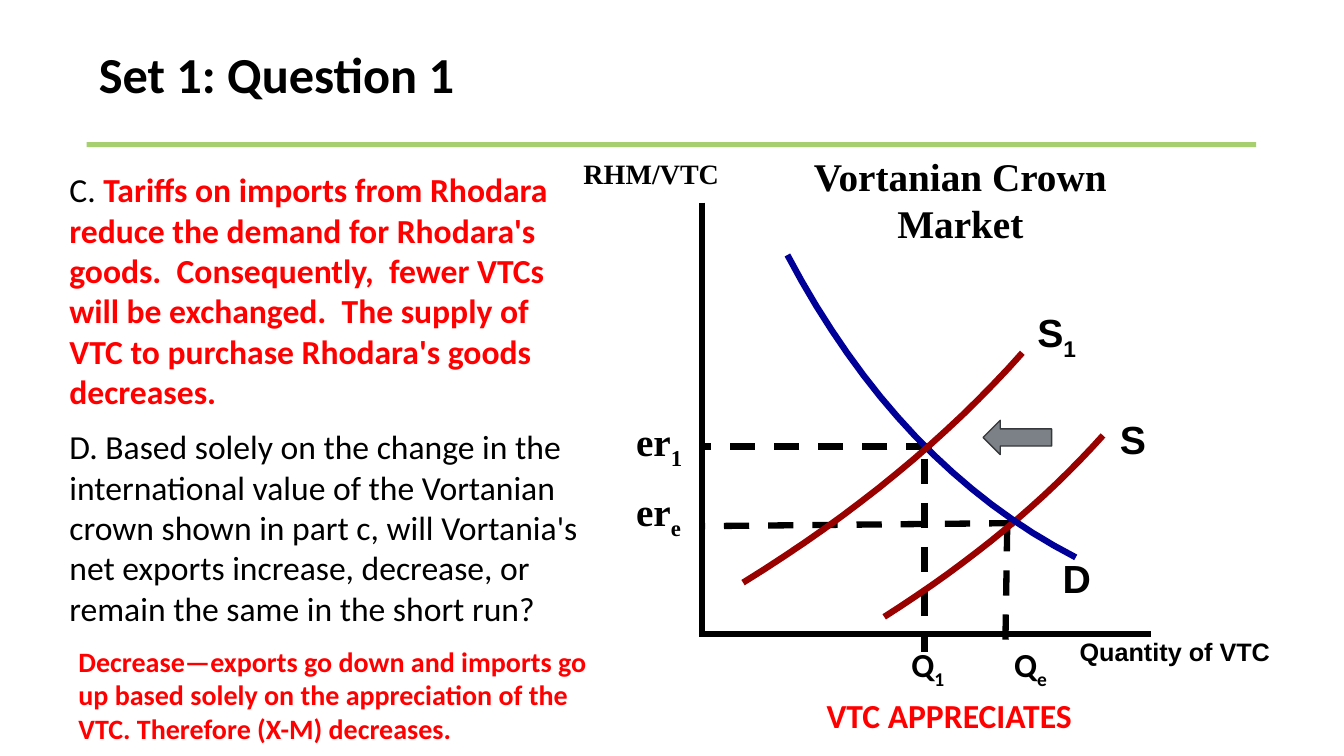
from pptx import Presentation
from pptx import util as u
from pptx.dml.color import RGBColor
from pptx.enum import dml, shapes, text
from pptx.oxml.ns import qn
from lxml import etree

CELL = u.Inches(0.1)  # grid cell: 133.3 columns by 75 rows
BLACK, RED, SUPPLY, DEMAND = "000000", "FF0000", "990000", "000099"
SERIF, SANS, BODY = "Times New Roman", "Arial", "Calibri"

prs = Presentation()
prs.slide_width, prs.slide_height = u.Inches(13.33), u.Inches(7.5)
s = prs.slides.add_slide(prs.slide_layouts[5])


def rgb(hex_string):
    return RGBColor.from_string(hex_string)


def write(sp, at, words, size, font, color=BLACK, bold=True, align="LEFT", anchor="TOP"):
    """Place a text shape; an underscore in words starts a subscript."""
    sp.left, sp.top, sp.width, sp.height = [int(v * CELL) for v in at]
    tf = sp.text_frame
    tf.word_wrap = True
    tf.vertical_anchor = text.MSO_ANCHOR[anchor]
    for i, line in enumerate(words.split("\n")):
        p = tf.add_paragraph() if i else tf.paragraphs[0]
        p.alignment = text.PP_ALIGN[align]
        p.font.size, p.font.name, p.font.bold = u.Pt(size), font, bold
        p.font.color.rgb = rgb(color)
        for j, part in enumerate(line.split("_")):
            r = p.add_run()
            r.text = part
            if j:
                r._r.get_or_add_rPr().set("baseline", "-25000")
    return tf


# Title and green rule
write(s.shapes.title, (8.8, 3.8, 74, 7.1), "Set 1: Question 1", 36, BODY)
rule = s.shapes.add_shape(shapes.MSO_SHAPE.RECTANGLE, *[int(v * CELL) for v in (8.6, 14.1, 116, 0.5)])
rule.shadow.inherit = False
rule.fill.solid()
rule.fill.fore_color.rgb = rgb("A7CE6F")
rule.line.fill.background()

# Axes and dashed guides: x1, y1, x2, y2, width, dashed
for *ends, width, dashed in [
    (100.6, 51.9, 69.5, 52.2, 4.5, True),
    (69.6, 20.1, 69.6, 63.2, 4, False),
    (69.4, 62.9, 114.2, 62.9, 4, False),
    (92.4, 44.3, 69.7, 44.3, 4.5, True),
    (91.7, 45.5, 91.7, 64.7, 4.5, True),
    (99.9, 52.2, 99.7, 65, 4.5, True),
]:
    line = s.shapes.add_connector(shapes.MSO_CONNECTOR.STRAIGHT, *[int(v * CELL) for v in ends])
    line.line.color.rgb = rgb(BLACK)
    line.line.width = u.Pt(width)
    if dashed:
        line.line.dash_style = dml.MSO_LINE.DASH
    etree.SubElement(line._element.spPr, qn("a:effectLst"))

# Supply and demand curves: quadratic arcs from start, control and end points
STEPS, FINE = 16, 100
for start, control, end, color in [
    ((87.7, 61.2), (100.65, 53), (109.4, 43.2), SUPPLY),
    ((78.1, 25.3), (89.2, 46.3), (106.7, 55.3), DEMAND),
    ((73.7, 57.8), (90.25, 47.6), (101.4, 35), SUPPLY),
]:
    points = []
    for i in range(STEPS + 1):
        t = i / STEPS
        points.append([FINE * ((1 - t) ** 2 * a + 2 * t * (1 - t) * b + t * t * c)
                       for a, b, c in zip(start, control, end)])
    builder = s.shapes.build_freeform(*points[0], scale=CELL / FINE)
    builder.add_line_segments(points[1:], close=False)
    curve = builder.convert_to_shape()
    curve.shadow.inherit = False
    curve.fill.background()
    curve.line.color.rgb = rgb(color)
    curve.line.width = u.Pt(4.5)

# Shift arrow
arrow = s.shapes.add_shape(shapes.MSO_SHAPE.LEFT_ARROW, *[int(v * CELL) for v in (97.5, 41.7, 6.8, 3.4)])
arrow.shadow.inherit = False
arrow.fill.solid()
arrow.fill.fore_color.rgb = rgb("7B8186")
arrow.line.color.rgb = rgb("36393B")
arrow.line.width = u.Pt(1)

# Graph headings
for at, words, size in [
    ((56.8, 14.4, 15.6, 5.6), "RHM/VTC", 20),
    ((78.1, 15.9, 34.3, 7.7), "Vortanian Crown\nMarket", 28),
]:
    write(s.shapes.add_textbox(0, 0, 0, 0), at, words, size, SERIF, align="CENTER", anchor="MIDDLE")

# Graph labels
for at, words, size, font, color in [
    ((101.9, 30.1, 8.5, 5.7), "S_1", 28, SANS, BLACK),
    ((110.1, 40.7, 4.2, 5.7), "S", 28, SANS, BLACK),
    ((104.4, 54.5, 6.8, 5.7), "D", 28, SANS, BLACK),
    ((62.1, 40.9, 9.2, 5.6), "er_1", 28, SERIF, BLACK),
    ((62.1, 47.9, 9.5, 5.3), "er_e", 28, SERIF, BLACK),
    ((89.4, 63.4, 7, 5), "Q_1", 24, BODY, BLACK),
    ((99.6, 63.4, 7, 5), "Q_e", 24, BODY, BLACK),
    ((106.1, 62.6, 27.2, 5), "Quantity of VTC", 18, SANS, BLACK),
    ((81, 68.4, 49, 5), "VTC APPRECIATES", 24, BODY, RED),
]:
    write(s.shapes.add_textbox(0, 0, 0, 0), at, words, size, font, color)

# Question parts and answers
tf = write(s.shapes.add_textbox(0, 0, 0, 0), (5.9, 16.3, 51, 25.2), "C. ", 24, BODY, bold=False)
r = tf.paragraphs[0].add_run()
r.text = ("Tariffs on imports from Rhodara reduce the demand for Rhodara's goods.  "
          "Consequently,  fewer VTCs will be exchanged.  The supply of VTC to purchase "
          "Rhodara's goods decreases.")
r.font.bold = True
r.font.color.rgb = rgb(RED)
write(s.shapes.add_textbox(0, 0, 0, 0), (5.9, 41.8, 53.1, 21.2),
      "D. Based solely on the change in the international value of the Vortanian crown "
      "shown in part c, will Vortania's net exports increase, decrease, or remain the "
      "same in the short run?", 24, BODY, bold=False)
write(s.shapes.add_textbox(0, 0, 0, 0), (6.8, 63.4, 53, 11.1),
      "Decrease—exports go down and imports go up based solely on the appreciation of "
      "the VTC. Therefore (X-M) decreases.", 20, BODY, RED)

prs.save("out.pptx")
